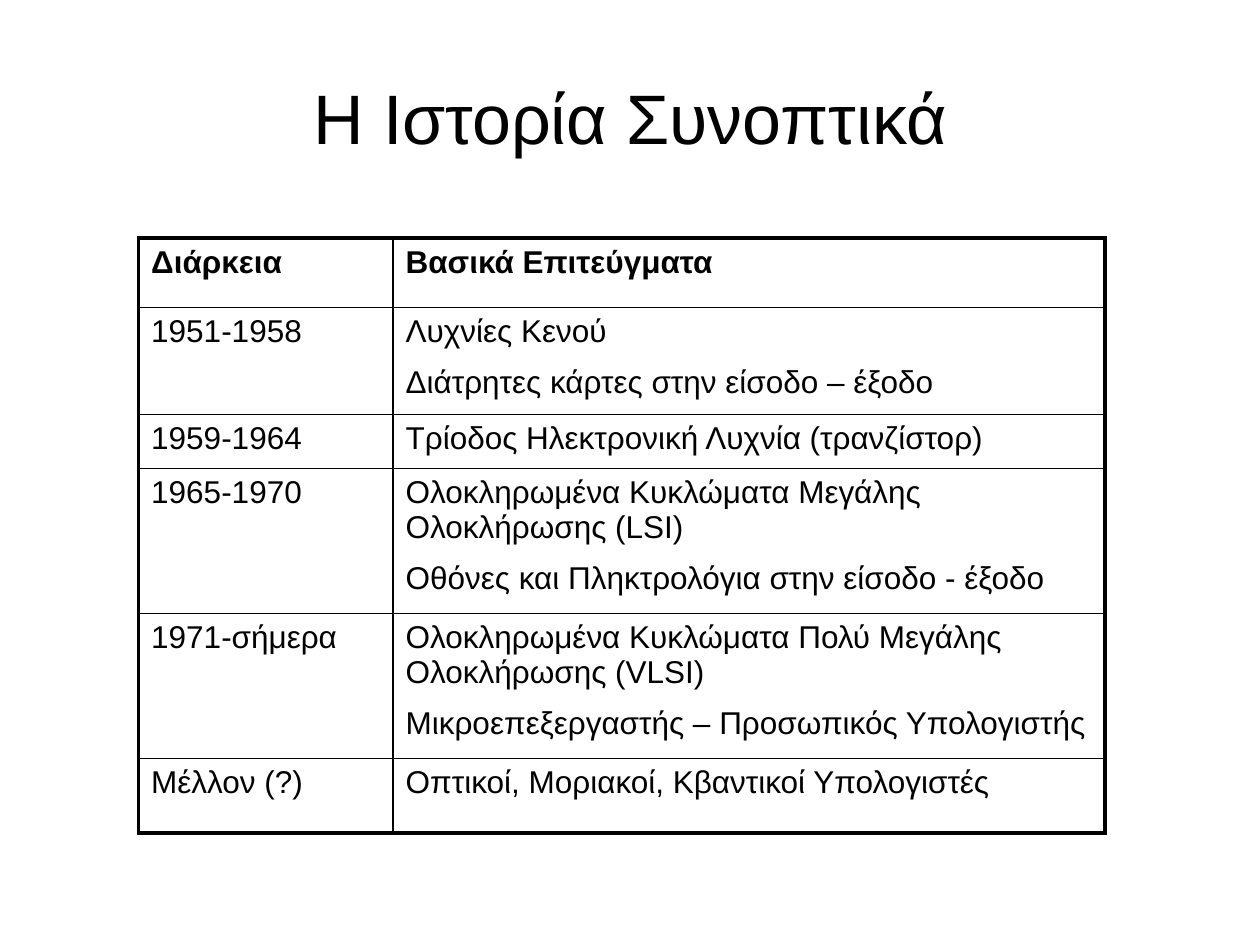
from lxml.etree import SubElement
from pptx import Presentation
from pptx.dml.color import RGBColor
from pptx.enum.text import MSO_ANCHOR, PP_ALIGN
from pptx.oxml.ns import qn
from pptx.util import Inches, Pt

BLACK = RGBColor(0, 0, 0)
WHITE = RGBColor(255, 255, 255)
THIN, THICK = 1, 2.25

COLS = [2.02, 5.65]
ROWS = [
    (0.55, "Διάρκεια", ["Βασικά Επιτεύγματα"]),
    (0.85, "1951-1958", ["Λυχνίες Κενού", "Διάτρητες κάρτες στην είσοδο – έξοδο"]),
    (0.43, "1959-1964", ["Τρίοδος Ηλεκτρονική Λυχνία (τρανζίστορ)"]),
    (1.15, "1965-1970", ["Ολοκληρωμένα Κυκλώματα Μεγάλης Ολοκλήρωσης (LSI)",
                         "Οθόνες και Πληκτρολόγια στην είσοδο - έξοδο"]),
    (1.15, "1971-σήμερα", ["Ολοκληρωμένα Κυκλώματα Πολύ Μεγάλης Ολοκλήρωσης (VLSI)",
                           "Μικροεπεξεργαστής – Προσωπικός Υπολογιστής"]),
    (0.59, "Μέλλον (?)", ["Οπτικοί, Μοριακοί, Κβαντικοί Υπολογιστές"]),
]


def write(frame, lines, size=18, bold=False, align=PP_ALIGN.LEFT, gap=9):
    frame.word_wrap = True
    for i, line in enumerate(lines):
        para = frame.paragraphs[0] if i == 0 else frame.add_paragraph()
        para.alignment = align
        para.space_before = Pt(gap if i else 0)
        run = para.add_run()
        run.text = line
        font = run.font
        font.name, font.size, font.bold = "Arial", Pt(size), bold
        font.color.rgb = BLACK


class Deck:
    def __init__(self, show):
        self.slide = show.slides.add_slide(show.slide_layouts[6])
        fill = self.slide.background.fill
        fill.solid()
        fill.fore_color.rgb = WHITE

    def title(self, text, left, top, width, height):
        box = self.slide.shapes.add_textbox(
            Inches(left), Inches(top), Inches(width), Inches(height))
        box.text_frame.vertical_anchor = MSO_ANCHOR.MIDDLE
        write(box.text_frame, [text], size=40, align=PP_ALIGN.CENTER)

    def border(self, cell, widths):
        props = cell._tc.get_or_add_tcPr()
        for side, width in widths.items():
            line = SubElement(props, qn(f"a:ln{side}"), w=str(Pt(width)))
            fill = SubElement(line, qn("a:solidFill"))
            SubElement(fill, qn("a:srgbClr"), val=str(BLACK))

    def table(self, rows, cols, left, top):
        high = sum(row[0] for row in rows)
        grid = self.slide.shapes.add_table(
            len(rows), len(cols), Inches(left), Inches(top),
            Inches(sum(cols)), Inches(high)).table
        for c, width in enumerate(cols):
            grid.columns[c].width = Inches(width)
        for r, (height, span, feats) in enumerate(rows):
            grid.rows[r].height = Inches(height)
            for c, lines in enumerate([[span], feats]):
                cell = grid.cell(r, c)
                write(cell.text_frame, lines, bold=r == 0)
                self.border(cell, {
                    "L": THICK if c == 0 else THIN,
                    "R": THICK if c == len(cols) - 1 else THIN,
                    "T": THICK if r == 0 else THIN,
                    "B": THICK if r == len(rows) - 1 else THIN,
                })
                cell.fill.background()


def main():
    show = Presentation()
    show.slide_width, show.slide_height = Inches(10), Inches(7.5)
    deck = Deck(show)
    deck.title("Η Ιστορία Συνοπτικά", 0.5, 0.3, 9, 1.25)
    deck.table(ROWS, COLS, 1.1, 1.89)
    show.save("out.pptx")


if __name__ == "__main__":
    main()
